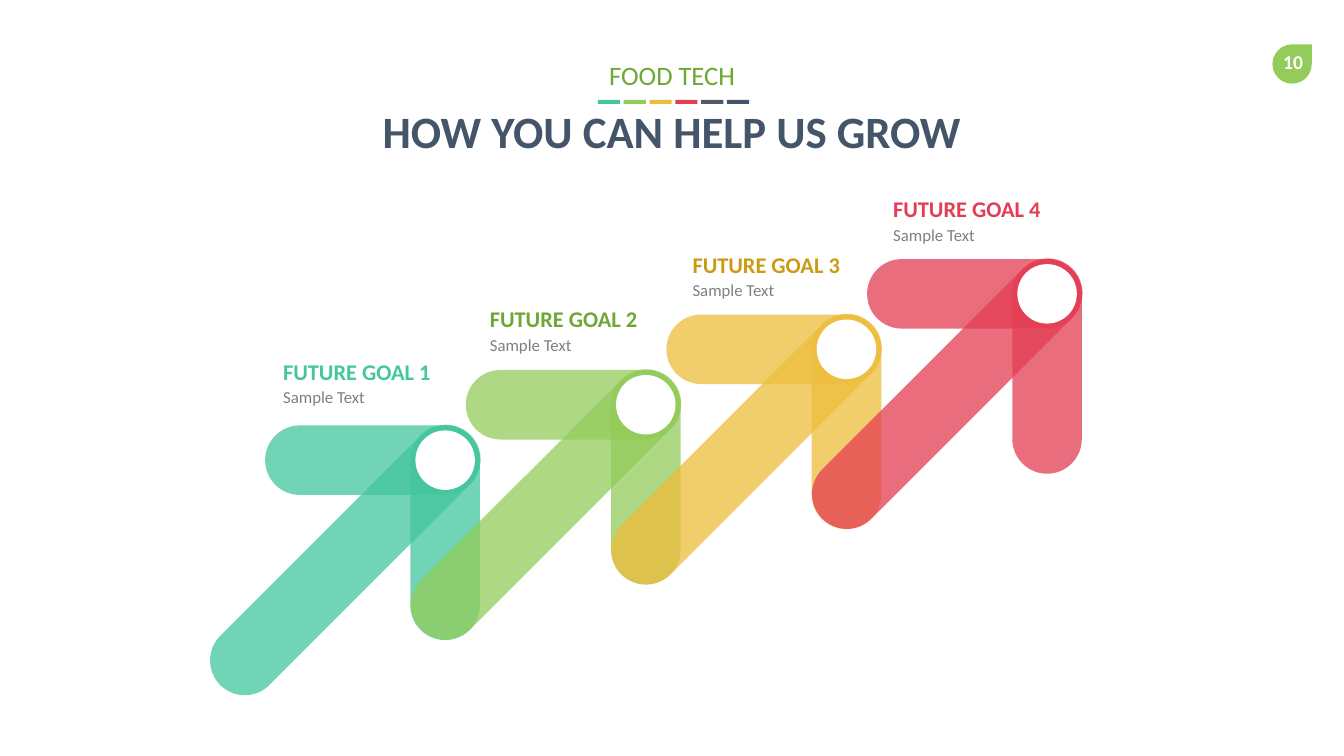
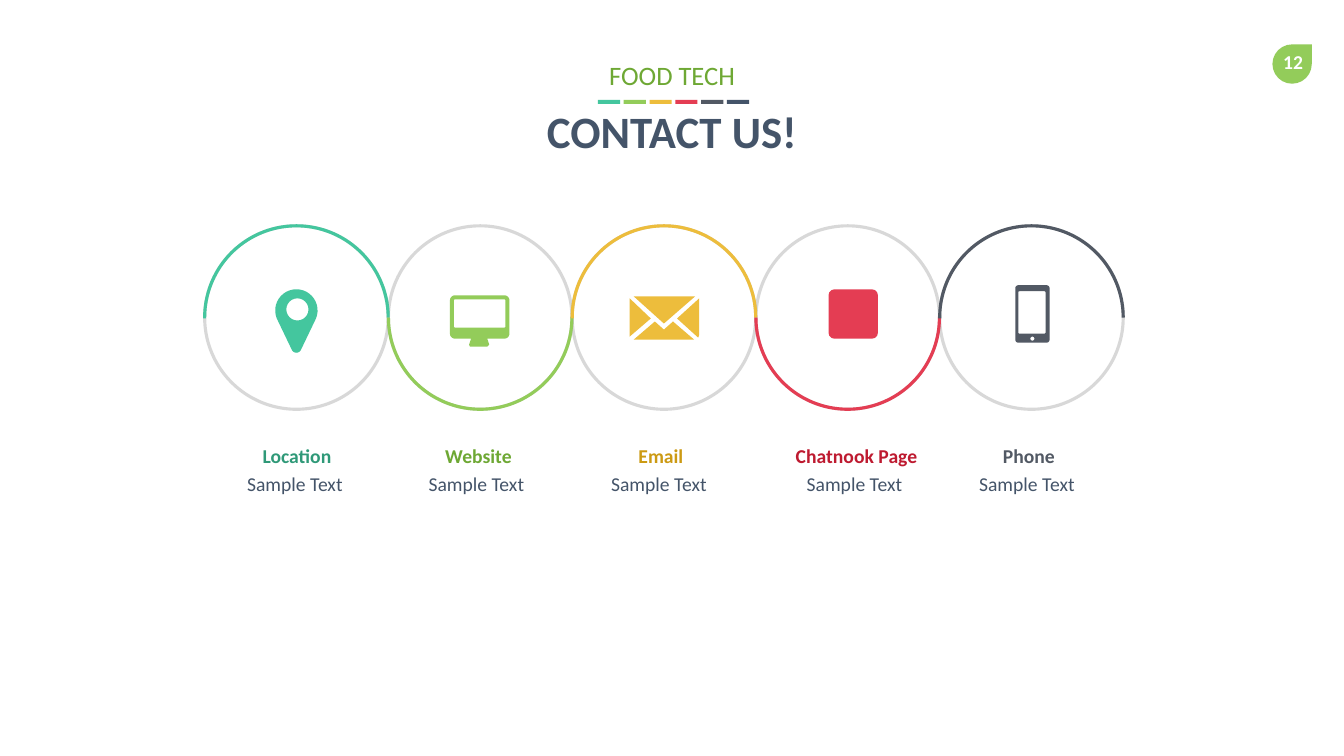
import math

import lxml.etree
import pptx
import pptx.dml.color
import pptx.enum.shapes
import pptx.enum.text
import pptx.oxml.ns
import pptx.util

Inches = pptx.util.Inches
SHAPES = pptx.enum.shapes.MSO_SHAPE
ALIGN = pptx.enum.text.PP_ALIGN

FONT = "Calibri"
COLOURS = {
    "teal": "44C69E",
    "green": "93CC5A",
    "amber": "EDBD3C",
    "red": "E43D53",
    "slate": "525964",
    "navy": "445469",
    "deep_teal": "2F9978",
    "deep_green": "6EA834",
    "deep_amber": "CC9A13",
    "deep_red": "BE1A30",
    "grey": "7F7F7F",
    "ring": "808080",
    "white": "FFFFFF",
}
BAND = ["teal", "green", "amber", "red", "slate", "navy"]
GOALS = [
    ("FUTURE GOAL 1", "teal", "teal", 0.08, -0.72),
    ("FUTURE GOAL 2", "green", "deep_green", 0.14, -0.69),
    ("FUTURE GOAL 3", "amber", "deep_amber", 0.16, -0.68),
    ("FUTURE GOAL 4", "red", "red", 0.16, -0.68),
]


def rgb(name):
    return pptx.dml.color.RGBColor.from_string(COLOURS[name])


def set_opacity(shape, percent):
    colour = next(shape.element.spPr.iter(pptx.oxml.ns.qn("a:srgbClr")))
    alpha = lxml.etree.SubElement(colour, pptx.oxml.ns.qn("a:alpha"))
    alpha.set("val", str(percent * 1000))


def paint(shape, colour):
    shape.shadow.inherit = False
    shape.fill.solid()
    shape.fill.fore_color.rgb = rgb(colour)
    shape.line.fill.background()


def add_filled(slide, kind, box, colour):
    shape = slide.shapes.add_shape(kind, *map(Inches, box))
    paint(shape, colour)
    return shape


def add_outlined(slide, kind, box, colour):
    shape = slide.shapes.add_shape(kind, *map(Inches, box))
    shape.shadow.inherit = False
    shape.fill.background()
    shape.line.color.rgb = rgb(colour)
    shape.line.width = pptx.util.Pt(2.25)
    return shape


def write(frame, text, size, colour, bold=False, align=ALIGN.CENTER):
    frame.word_wrap = True
    frame.auto_size = pptx.enum.text.MSO_AUTO_SIZE.NONE
    frame.vertical_anchor = pptx.enum.text.MSO_ANCHOR.TOP
    paragraph = frame.paragraphs[0]
    paragraph.alignment = align
    run = paragraph.add_run()
    run.text = text
    run.font.name = FONT
    run.font.size = pptx.util.Pt(size)
    run.font.bold = bold
    run.font.color.rgb = rgb(colour)
    return paragraph


def add_text(slide, box, *content, **style):
    frame = slide.shapes.add_textbox(*map(Inches, box)).text_frame
    return frame, write(frame, *content, **style)


def add_page_number(slide, left, top, number):
    add_filled(slide, SHAPES.TEAR, (left, top, 0.39, 0.39), "green")
    add_text(slide, (left - 0.01, top + 0.01, 0.43, 0.34), number, 14, "white", bold=True)


def add_header(slide, left, top, width, headline):
    title = slide.shapes.title
    title.left, title.top = Inches(left), Inches(top + 0.44)
    title.width, title.height = Inches(width), Inches(0.64)
    write(title.text_frame, headline, 32, "navy", bold=True)
    for index, colour in enumerate(BAND):
        dash_left = left + 4.99 + index * 1.28 / 5
        add_filled(slide, SHAPES.RECTANGLE, (dash_left, top + 0.45, 0.22, 0.04), colour)
    add_text(slide, (left, top, width, 0.42), "FOOD TECH", 19, "deep_green")


def new_slide(deck, headline, number):
    slide = deck.slides.add_slide(deck.slide_layouts[5])
    add_page_number(slide, 12.62, 0.44, number)
    add_header(slide, 0.94, 0.54, 11.45, headline)
    return slide


def add_arrow(slide, left, top, colour):
    bars = [(0, 0, 2.13, 0), (0.72, 0.72, 2.13, 90), (-0.96, 0.99, 3.51, 315)]
    for dx, dy, length, angle in bars:
        box = (left + dx, top + dy, length, 0.69)
        bar = add_filled(slide, SHAPES.ROUNDED_RECTANGLE, box, colour)
        bar.adjustments[0] = 0.5
        bar.rotation = angle
        set_opacity(bar, 75)
    add_filled(slide, SHAPES.OVAL, (left + 1.49, top + 0.05, 0.59, 0.59), "white")


def add_goal_label(slide, left, top, goal, colour):
    add_text(slide, (left, top, 2.29, 0.37), goal, 16, colour, bold=True, align=ALIGN.LEFT)
    add_text(slide, (left, top + 0.29, 2.29, 0.3), "Sample Text", 12, "grey", align=ALIGN.LEFT)


def build_goals(deck):
    slide = new_slide(deck, "HOW YOU CAN HELP US GROW", "10")
    for index, (goal, colour, label_colour, dx, dy) in enumerate(GOALS):
        left, top = 2.63 + 1.99 * index, 4.22 - 0.55 * index
        add_arrow(slide, left, top, colour)
        add_goal_label(slide, left + dx, top + dy, goal, label_colour)


def arc_points(x, y, radius, start, end, steps=24):
    angles = [math.radians(start + (end - start) * i / steps) for i in range(steps + 1)]
    return [(x + radius * math.cos(a), y + radius * math.sin(a)) for a in angles]


def rounded_box(left, top, width, height, radius):
    right, bottom = left + width - radius, top + height - radius
    left, top = left + radius, top + radius
    corners = [(right, bottom), (left, bottom), (left, top), (right, top)]
    return [
        point
        for index, (x, y) in enumerate(corners)
        for point in arc_points(x, y, radius, 90 * index, 90 * index + 90, 6)
    ]


def pin_outline():
    head = arc_points(0.21, 0.21, 0.21, 157, 383)
    tip = arc_points(0.21, 0.58, 0.05, 20, 160, 8)
    return [head + tip, arc_points(0.22, 0.2, 0.11, 0, 360)]


def monitor_outline():
    stand = [(0.21, 0.43), (0.19, 0.49), (0.2, 0.51), (0.37, 0.51), (0.39, 0.49), (0.37, 0.43)]
    return [rounded_box(0, 0, 0.59, 0.43, 0.05), rounded_box(0.04, 0.04, 0.51, 0.28, 0.01), stand]


def envelope_outline():
    return [
        [(0.04, 0), (0.65, 0), (0.34, 0.27)],
        [(0.69, 0.02), (0.47, 0.22), (0.68, 0.41), (0.69, 0.38)],
        [(0, 0.02), (0.21, 0.22), (0, 0.4)],
        [(0.34, 0.33), (0.25, 0.25), (0.04, 0.43), (0.64, 0.43), (0.43, 0.25)],
    ]


def phone_outline():
    return [
        rounded_box(0, 0, 0.34, 0.57, 0.03),
        rounded_box(0.03, 0.06, 0.27, 0.42, 0.01),
        arc_points(0.17, 0.53, 0.02, 0, 360),
    ]


def add_icon(slide, left, top, contours, colour):
    builder = None
    for contour in contours:
        points = [(Inches(x), Inches(y)) for x, y in contour]
        if builder is None:
            builder = slide.shapes.build_freeform(*points[0], scale=1.0)
        else:
            builder.move_to(*points[0])
        builder.add_line_segments(points[1:], close=True)
    paint(builder.convert_to_shape(Inches(left), Inches(top)), colour)


def add_caption(slide, left, top, channel, colour):
    add_text(slide, (left + 0.02, top, 2.19, 0.34), channel, 14, colour, bold=True)
    box = (left, top + 0.31, 2.19, 0.33)
    frame, paragraph = add_text(slide, box, "Sample Text", 14, "navy")
    frame.margin_left = frame.margin_right = Inches(0.27)
    frame.margin_bottom = Inches(0.07)
    paragraph.line_spacing = 0.89


CHANNELS = [
    ("Location", "teal", "deep_teal", 1.83, pin_outline, 0.7, 0.63),
    ("Website", "green", "deep_green", 3.63, monitor_outline, 0.61, 0.69),
    ("Email", "amber", "deep_amber", 5.44, envelope_outline, 0.57, 0.7),
    ("Chatnook Page", "red", "deep_red", 7.38, None, 0.72, 0.63),
    ("Phone", "slate", "slate", 9.09, phone_outline, 0.75, 0.59),
]


def build_contacts(deck):
    slide = new_slide(deck, "CONTACT US!", "12")
    top, size = 2.24, 1.82
    lefts = [2.03 + 7.29 * index / 4 for index in range(len(CHANNELS))]
    for left in lefts:
        ring = add_outlined(slide, SHAPES.OVAL, (left, top, size, size), "ring")
        set_opacity(ring, 30)
    for index, (left, entry) in enumerate(zip(lefts, CHANNELS)):
        channel, colour, label_colour, caption_left, outline, dx, dy = entry
        half = add_outlined(slide, SHAPES.ARC, (left, top, size, size), colour)
        half.adjustments[0] = 107.66
        half.adjustments[1] = 0
        half.rotation = 180 * (index % 2)
        if outline:
            add_icon(slide, left + dx, top + dy, outline(), colour)
        else:
            tile = (left + dx, top + dy, 0.49, 0.49)
            add_filled(slide, SHAPES.ROUNDED_RECTANGLE, tile, colour).adjustments[0] = 0.12
        add_caption(slide, caption_left, 4.35, channel, label_colour)


def main():
    deck = pptx.Presentation()
    deck.slide_width, deck.slide_height = Inches(13.33), Inches(7.5)
    build_goals(deck)
    build_contacts(deck)
    deck.save("out.pptx")


if __name__ == "__main__":
    main()
